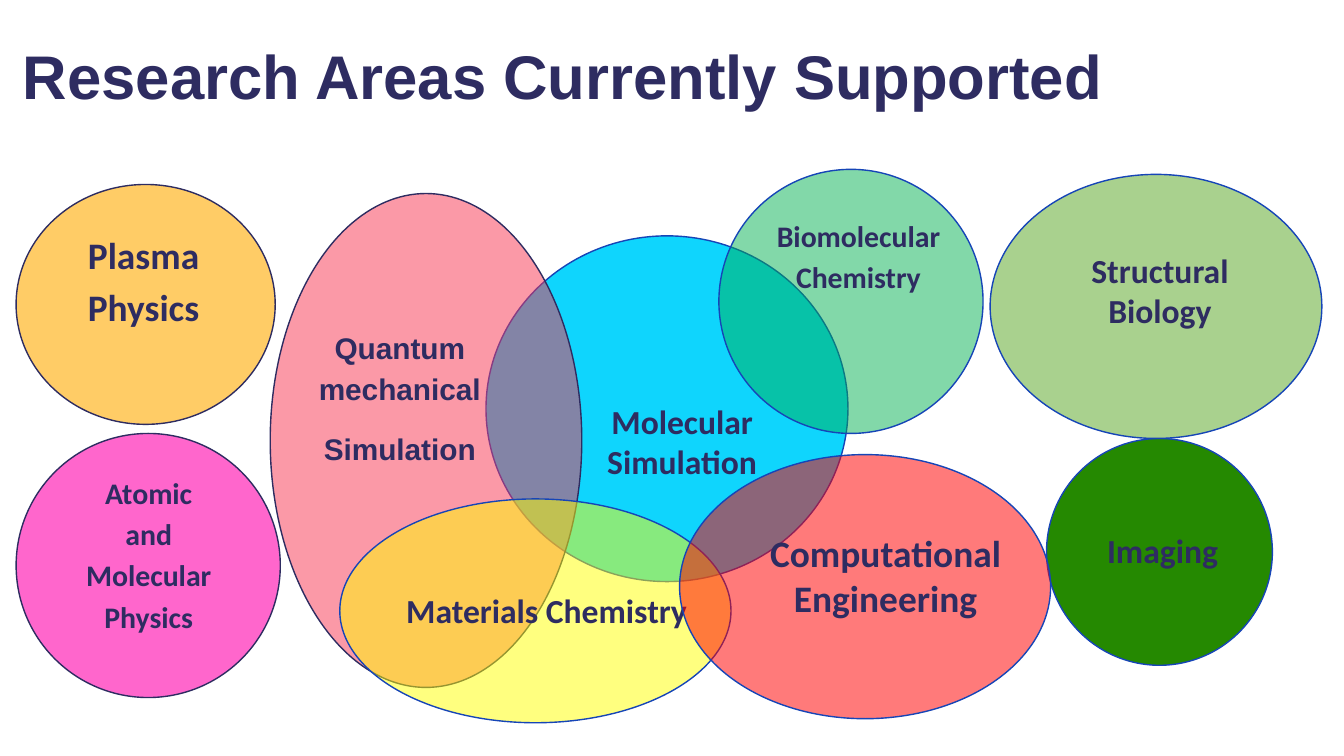
import pptx
import pptx.util
import pptx.dml.color
import pptx.enum.shapes
import pptx.enum.text
import pptx.oxml.ns
import lxml.etree

Inches = pptx.util.Inches
RGBColor = pptx.dml.color.RGBColor

NAVY = RGBColor(0x2E, 0x2C, 0x61)
BLUE = RGBColor(0x16, 0x45, 0xB7)
DARK_GREEN = RGBColor(0x25, 0x89, 0x01)
CYAN = RGBColor(0x0F, 0xD5, 0xFD)
GREEN = RGBColor(0x00, 0xB0, 0x50)
ROSE = RGBColor(0xF8, 0x34, 0x50)
ORANGE = RGBColor(0xFF, 0xCC, 0x66)
PINK = RGBColor(0xFF, 0x66, 0xCC)
YELLOW = RGBColor(0xFF, 0xFF, 0x00)
RED = RGBColor(0xFF, 0x00, 0x00)
LIGHT_GREEN = RGBColor(0xA9, 0xD1, 0x8E)

CENTER = pptx.enum.text.PP_ALIGN.CENTER
LEFT = pptx.enum.text.PP_ALIGN.LEFT
PLAIN = {"alignment": CENTER}
SPACED = {"alignment": CENTER, "line_spacing": 1.15, "space_after": pptx.util.Pt(13.3)}

presentation = pptx.Presentation()
presentation.slide_width = Inches(13.33)
presentation.slide_height = Inches(7.5)
slide = presentation.slides.add_slide(presentation.slide_layouts[6])


def add_area(box, fill, opacity, line):
    ellipse = slide.shapes.add_shape(
        pptx.enum.shapes.MSO_SHAPE.OVAL, *[Inches(length) for length in box])
    ellipse.shadow.inherit = False
    ellipse.fill.solid()
    ellipse.fill.fore_color.rgb = fill
    ellipse.line.color.rgb = line
    ellipse.line.width = pptx.util.Pt(1)
    if opacity < 100:
        color = ellipse.fill._xPr.find(".//" + pptx.oxml.ns.qn("a:srgbClr"))
        alpha = lxml.etree.SubElement(color, pptx.oxml.ns.qn("a:alpha"))
        alpha.set("val", str(opacity * 1000))


def add_label(box, lines, size, font_name, paragraph_format):
    label = slide.shapes.add_textbox(*[Inches(length) for length in box])
    frame = label.text_frame
    frame.word_wrap = True
    frame.text = "\n".join(lines)
    font_format = {"name": font_name, "size": pptx.util.Pt(size), "bold": True}
    for paragraph in frame.paragraphs:
        for name, value in paragraph_format.items():
            setattr(paragraph, name, value)
        for run in paragraph.runs:
            for name, value in font_format.items():
                setattr(run.font, name, value)
            run.font.color.rgb = NAVY
    return frame


areas = [
    ((10.38, 4.35, 2.24, 2.25), DARK_GREEN, 100, BLUE,
     (10.82, 5.21, 1.42, 0.42), ["Imaging"], 24, "Calibri", PLAIN),
    ((4.82, 2.34, 3.59, 3.43), CYAN, 100, BLUE,
     (5.64, 3.93, 2.25, 0.74), ["Molecular Simulation"], 24, "Calibri", PLAIN),
    ((7.13, 1.68, 2.62, 2.62), GREEN, 49, BLUE,
     (7.5, 2.06, 2.03, 0.72), ["Biomolecular Chemistry"], 21.3, "Calibri", SPACED),
    ((2.68, 1.92, 3.09, 4.9), ROSE, 50, NAVY,
     (2.97, 3.17, 1.99, 1.05), ["Quantum mechanical", "Simulation"], 21.3, "Arial", SPACED),
    ((0.16, 1.83, 2.57, 2.38), ORANGE, 100, NAVY,
     (0.73, 2.19, 1.39, 0.6), ["Plasma Physics"], 26.7, "Calibri", SPACED),
    ((0.16, 4.3, 2.62, 2.62), PINK, 100, NAVY,
     (0.72, 4.61, 1.51, 0.93), ["Atomic and Molecular Physics"], 21.3, "Calibri", SPACED),
    ((3.37, 4.95, 3.88, 2.22), YELLOW, 50, BLUE,
     (3.93, 5.8, 3.26, 0.9), ["Materials Chemistry"], 24, "Calibri", {"alignment": LEFT}),
    ((6.74, 4.51, 3.68, 2.62), RED, 52, BLUE,
     (7.5, 5.21, 2.57, 0.75), ["Computational", "Engineering"], 26.7, "Calibri", PLAIN),
    ((9.82, 1.73, 3.29, 2.62), LIGHT_GREEN, 100, BLUE,
     (10.41, 2.43, 2.19, 0.38), ["Structural Biology"], 24, "Calibri", PLAIN),
]
for ellipse_box, fill, opacity, line, label_box, lines, size, font_name, paragraph_format in areas:
    add_area(ellipse_box, fill, opacity, line)
    add_label(label_box, lines, size, font_name, paragraph_format)

title_frame = add_label((0.13, 0.16, 13.2, 1.25), ["Research Areas Currently Supported"],
                        44, "Arial", {"alignment": LEFT, "line_spacing": 0.9})
title_frame.vertical_anchor = pptx.enum.text.MSO_ANCHOR.MIDDLE

presentation.save("out.pptx")
